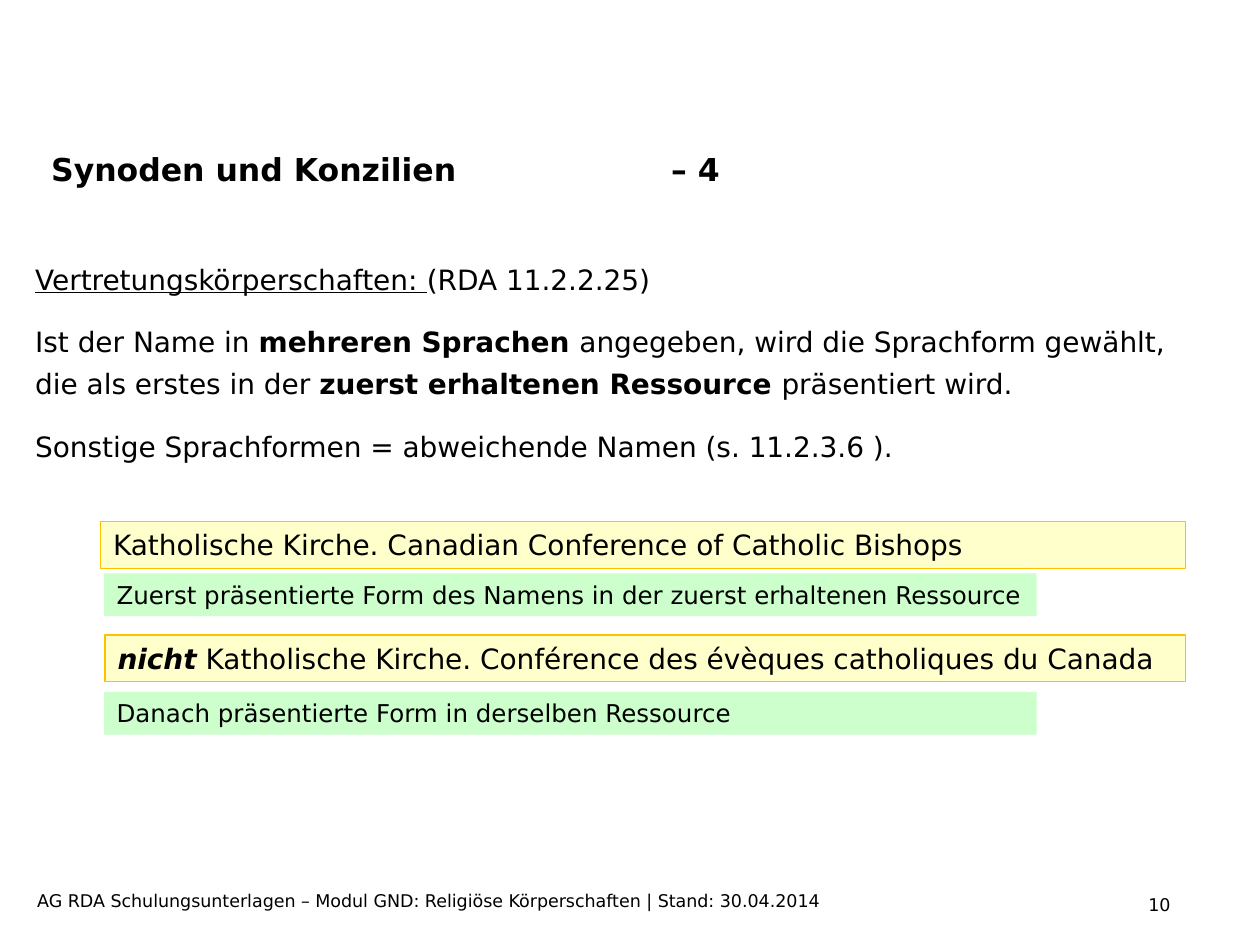
import pptx
import pptx.util
import pptx.dml.color
import pptx.enum.shapes
import pptx.enum.text
import lxml.etree

Cm = pptx.util.Cm
Pt = pptx.util.Pt
FONT = "DejaVu Sans"
GREEN = "CCFFCC"
CREAM = "FFFFCC"
GOLD = "FFC000"


def color(code):
    return pptx.dml.color.RGBColor.from_string(code)


def add(para, tag, **attrs):
    props = para._p.get_or_add_pPr()
    name = pptx.oxml.ns.qn(tag)
    return lxml.etree.SubElement(props, name, attrs)


def write(para, text, size=16, bold=False, slant=False, under=False):
    run = para.add_run()
    run.text = text
    font = run.font
    font.name = FONT
    font.size = Pt(size)
    font.bold = bold
    font.italic = slant
    font.underline = under
    font.color.rgb = color("000000")


def place(shape, left, top, width, height):
    shape.left, shape.top = Cm(left), Cm(top)
    shape.width, shape.height = Cm(width), Cm(height)


def setup(frame, inset=None):
    frame.word_wrap = True
    frame.auto_size = pptx.enum.text.MSO_AUTO_SIZE.NONE
    frame.vertical_anchor = pptx.enum.text.MSO_ANCHOR.TOP
    if inset is not None:
        frame.margin_left = Cm(inset)
        frame.margin_right = frame.margin_top = frame.margin_bottom = 0


def title(slide, text):
    shape = slide.shapes.title
    place(shape, 0.81, 2.72, 21.08, 2.16)
    setup(shape.text_frame, 0.22)
    para = shape.text_frame.paragraphs[0]
    para.alignment = pptx.enum.text.PP_ALIGN.LEFT
    para.line_spacing = Pt(30)
    tabs = add(para, "a:tabLst")
    name = pptx.oxml.ns.qn("a:tab")
    lxml.etree.SubElement(tabs, name, pos=str(Cm(12.5)), algn="l")
    write(para, text, size=18, bold=True)


def body(slide, items):
    shape = slide.placeholders[1]
    place(shape, 0.71, 5.13, 22.81, 11)
    frame = shape.text_frame
    setup(frame, 0)
    for num, (gap, runs) in enumerate(items):
        para = frame.add_paragraph() if num else frame.paragraphs[0]
        para.line_spacing = Pt(24)
        para.space_before = Pt(gap)
        props = para._p.get_or_add_pPr()
        props.set("marL", "0")
        props.set("indent", "0")
        add(para, "a:buNone")
        for text, style in runs:
            write(para, text, **style)


def bar(slide, area, fill, runs, line=None):
    kind = pptx.enum.shapes.MSO_SHAPE.RECTANGLE
    shape = slide.shapes.add_shape(kind, *map(Cm, area))
    shape.shadow.inherit = False
    shape.fill.solid()
    shape.fill.fore_color.rgb = color(fill)
    if line:
        shape.line.color.rgb = color(line)
        shape.line.width = Pt(0.75)
    else:
        shape.line.fill.background()
    setup(shape.text_frame)
    para = shape.text_frame.paragraphs[0]
    para.alignment = pptx.enum.text.PP_ALIGN.LEFT
    for text, style in runs:
        write(para, text, **style)


def label(slide, area, text):
    box = slide.shapes.add_textbox(*map(Cm, area))
    setup(box.text_frame)
    write(box.text_frame.paragraphs[0], text, size=10)


def main():
    deck = pptx.Presentation()
    deck.slide_width, deck.slide_height = Cm(25.4), Cm(19.05)
    slide = deck.slides.add_slide(deck.slide_layouts[1])
    plain, bold, small = {}, {"bold": True}, {"size": 14}

    title(slide, "Synoden und Konzilien \t– 4")
    body(slide, [
        (0, [("Vertretungskörperschaften: ", {"under": True}),
             ("(RDA 11.2.2.25)", plain)]),
        (11.2, [("Ist der Name in ", plain),
                ("mehreren Sprachen ", bold),
                ("angegeben, wird die Sprachform gewählt, "
                 "die als erstes in der ", plain),
                ("zuerst erhaltenen Ressource ", bold),
                ("präsentiert wird.", plain)]),
        (12, [("Sonstige Sprachformen = abweichende Namen "
               "(s. 11.2.3.6 ).", plain)]),
    ])

    notes = [
        (11.56, "Zuerst präsentierte Form des Namens "
                "in der zuerst erhaltenen Ressource"),
        (13.95, "Danach präsentierte Form in derselben Ressource"),
    ]
    for top, text in notes:
        bar(slide, (2.1, top, 18.8, 0.86), GREEN, [(text, small)])

    names = [
        (2.03, 10.52, [("Katholische Kirche. Canadian Conference "
                        "of Catholic Bishops", plain)]),
        (2.12, 12.8, [("nicht", {"bold": True, "slant": True}),
                      (" Katholische Kirche. Conférence des évèques "
                       "catholiques du Canada", plain)]),
    ]
    for left, top, runs in names:
        bar(slide, (left, top, 23.9 - left, 0.94), CREAM, runs, line=GOLD)

    label(slide, (0.5, 17.82, 17.8, 0.69),
          "AG RDA Schulungsunterlagen – Modul GND: "
          "Religiöse Körperschaften | Stand: 30.04.2014")
    label(slide, (22.9, 17.9, 2, 0.8), "10")
    deck.save("out.pptx")


if __name__ == "__main__":
    main()
